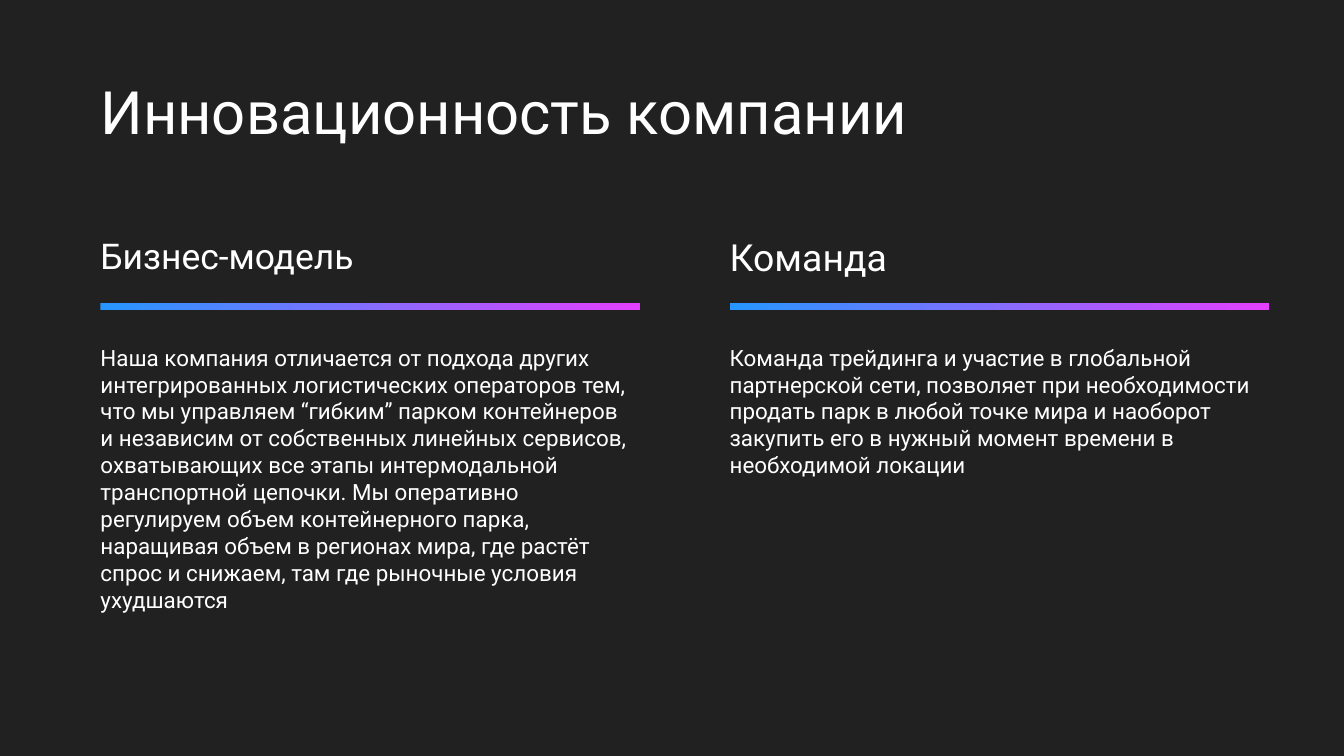
from pptx import Presentation
from pptx.dml.color import RGBColor
from pptx.enum.shapes import MSO_SHAPE
from pptx.enum.text import MSO_ANCHOR
from pptx.util import Cm, Pt

BACKGROUND = RGBColor(0x21, 0x21, 0x21)
WHITE = RGBColor(0xFF, 0xFF, 0xFF)
BLUE = RGBColor(0x27, 0x97, 0xFF)
PINK = RGBColor(0xE4, 0x40, 0xFF)

INSET = Cm(0.25)
COLUMN_LEFT = Cm(1.65)
COLUMN_STEP = Cm(11.89)
RULE_WIDTH = Cm(10.19)

columns = [
    ("Бизнес-модель", 19, Cm(5.84),
     "Наша компания отличается от подхода других интегрированных логистических "
     "операторов тем, что мы управляем “гибким” парком контейнеров и независим от "
     "собственных линейных сервисов, охватывающих все этапы интермодальной "
     "транспортной цепочки. Мы оперативно регулируем объем контейнерного парка, "
     "наращивая объем в регионах мира, где растёт спрос и снижаем, там где "
     "рыночные условия ухудшаются"),
    ("Команда", 20, Cm(4.29),
     "Команда трейдинга и участие в глобальной партнерской сети, позволяет при "
     "необходимости продать парк в любой точке мира и наоборот закупить его в "
     "нужный момент времени в необходимой локации"),
]

presentation = Presentation()
presentation.slide_width = Cm(25.4)
presentation.slide_height = Cm(14.29)
slide = presentation.slides.add_slide(presentation.slide_layouts[6])
slide.background.fill.solid()
slide.background.fill.fore_color.rgb = BACKGROUND


def add_text(left, top, width, height, text, size):
    frame = slide.shapes.add_textbox(left, top, width, height).text_frame
    frame.word_wrap = True
    frame.vertical_anchor = MSO_ANCHOR.TOP
    frame.margin_left = frame.margin_right = INSET
    frame.margin_top = frame.margin_bottom = INSET
    run = frame.paragraphs[0].add_run()
    run.text = text
    run.font.name = "Roboto"
    run.font.size = Pt(size)
    run.font.color.rgb = WHITE


add_text(COLUMN_LEFT, Cm(1.17), Cm(18.06), Cm(1.88), "Инновационность компании", 32)

for index, (heading, heading_size, heading_width, body) in enumerate(columns):
    left = COLUMN_LEFT + index * COLUMN_STEP

    rule = slide.shapes.add_shape(
        MSO_SHAPE.RECTANGLE, left + INSET, Cm(5.73), RULE_WIDTH, Cm(0.13))
    rule.shadow.inherit = False
    rule.line.fill.background()
    rule.fill.gradient()
    rule.fill.gradient_angle = 0
    for stop, color, position in zip(rule.fill.gradient_stops, (BLUE, PINK), (0, 1)):
        stop.color.rgb = color
        stop.position = position

    add_text(left, Cm(4.17), heading_width, Cm(1.12), heading, heading_size)
    add_text(left, Cm(6.25), Cm(10.46), Cm(6.22), body, 12)

presentation.save("out.pptx")
